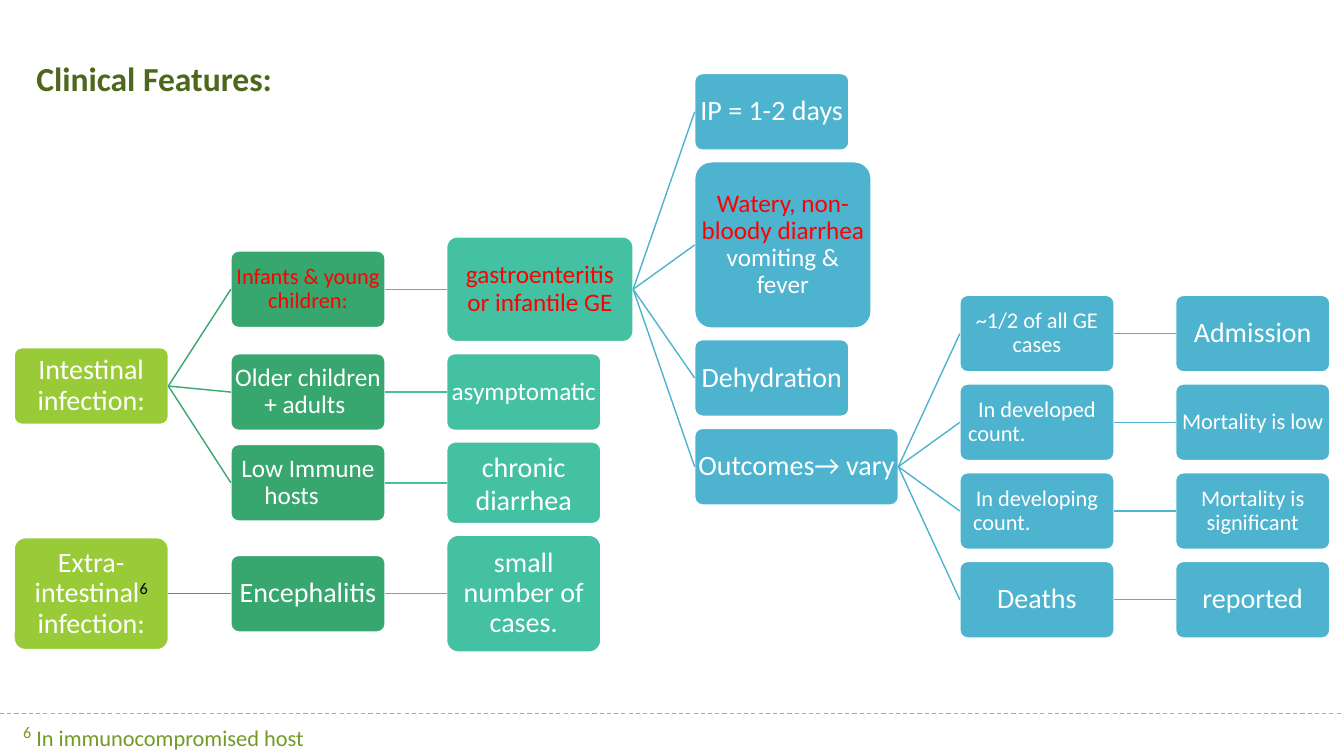
from lxml import etree
from pptx import Presentation
from pptx.dml.color import RGBColor
from pptx.enum.dml import MSO_LINE
from pptx.enum.shapes import MSO_CONNECTOR, MSO_SHAPE
from pptx.enum.text import MSO_ANCHOR, PP_ALIGN
from pptx.oxml.ns import qn
from pptx.util import Inches, Pt

DASH = MSO_LINE.DASH
LINE = MSO_CONNECTOR.STRAIGHT
ROUND = MSO_SHAPE.ROUNDED_RECTANGLE
MIDDLE = MSO_ANCHOR.MIDDLE
CENTER, LEFT = PP_ALIGN.CENTER, PP_ALIGN.LEFT

FONT = "Calibri"
WHITE, RED, BLACK = "FFFFFF", "FF0000", "000000"
LIME, GREEN, TEAL, BLUE = "99CB38", "37A76F", "44C1A3", "4EB3CF"
WIDE, HIGH = 1.53, 0.76

TITLE = "Clinical Features:"
NOTE = [("6", 20, 30), (" In immunocompromised host", 16, 0)]

# Left edge and colour of each level of the tree
LEVELS = [(0.14, LIME), (2.29, GREEN), (4.43, TEAL),
          (6.89, BLUE), (9.52, BLUE), (11.66, BLUE)]

# Node: paragraphs, text size, middle height, (width, height), children
# Paragraph: left indent (None = centred), runs of (text, colour, baseline)
SIZE = (WIDE, HIGH)


def para(text, colour=WHITE, indent=None):
    return indent, [(text, colour, 0)]


OUTCOMES = [
    ([para("~1/2 of all GE cases")], 16, 3.31, SIZE, [
        ([para("Admission")], 20, 3.31, SIZE, [])]),
    ([para("In developed"), para("count.", indent=0.05)], 16, 4.19, SIZE, [
        ([para("Mortality is low")], 16, 4.19, SIZE, [])]),
    ([para("In developing"), para("count.", indent=0.1)], 16, 5.07, SIZE, [
        ([para("Mortality is significant")], 16, 5.07, SIZE, [])]),
    ([para("Deaths")], 20, 5.95, SIZE, [
        ([para("reported")], 20, 5.95, SIZE, [])]),
]
SIGNS = [
    ([para("IP = 1-2 days")], 20, 1.11, SIZE, []),
    ([(None, [("Watery, non-bloody diarrhea ", RED, 0),
              ("vomiting & fever", WHITE, 0)])], 18, 2.43, (1.75, 1.65), []),
    ([para("Dehydration")], 20, 3.75, SIZE, []),
    ([para("Outcomes→ vary")], 20, 4.63, (2.02, HIGH), OUTCOMES),
]
TREE = [
    ([para("Intestinal infection:")], 20, 3.83, SIZE, [
        ([para("Infants & young children:", RED)], 16, 2.87, SIZE, [
            ([para("gastroenteritis", RED), para("or infantile GE", RED)],
             18, 2.87, (1.85, 1.04), SIGNS)]),
        ([para("Older children"), para("+ adults", indent=0.3)],
         18, 3.89, SIZE, [
            ([para("asymptomatic")], 18, 3.89, SIZE, [])]),
        ([para("Low Immune"), para("hosts", indent=0.3)], 18, 4.79, SIZE, [
            ([para("chronic"), para("diarrhea")],
             20, 4.79, (WIDE, 0.81), [])]),
    ]),
    ([(None, [("Extra-intestinal", WHITE, 0), ("6", BLACK, 30),
              (" infection:", WHITE, 0)])], 20, 5.89, (WIDE, 1.11), [
        ([para("Encephalitis")], 20, 5.89, SIZE, [
            ([para("small number of cases.")],
             20, 5.89, (WIDE, 1.16), [])])]),
]


def rgb(code):
    return RGBColor.from_string(code)


def put(item, values):
    for name, value in values.items():
        setattr(item, name, value)


def add_run(par, text, size, colour, base=0, bold=False):
    run = par.add_run()
    run.text = text
    put(run.font, {"name": FONT, "size": Pt(size), "bold": bold})
    run.font.color.rgb = rgb(colour)
    if base:
        run.font._element.set("baseline", str(base * 1000))


def add_line(slide, colour, width, ends=(0, 0, 0, 0)):
    line = slide.shapes.add_connector(LINE, *map(Inches, ends))
    line.line.color.rgb = rgb(colour)
    line.line.width = Pt(width)
    etree.SubElement(line._element.spPr, qn("a:effectLst"))
    return line


def add_node(slide, node, level=0, parent=None):
    """Draw a node, its link to the parent, and all its children."""
    paras, size, mid, (wide, high), kids = node
    left, colour = LEVELS[level]
    box = slide.shapes.add_shape(
        ROUND, *map(Inches, (left, mid - high / 2, wide, high)))
    box.adjustments[0] = 0.1
    box.shadow.inherit = False
    box.fill.solid()
    box.fill.fore_color.rgb = rgb(colour)
    box.line.color.rgb = rgb(WHITE)
    box.line.width = Pt(1)
    frame = box.text_frame
    pad = Inches(0.01)
    put(frame, {"word_wrap": True, "vertical_anchor": MIDDLE,
                "margin_left": pad, "margin_right": pad,
                "margin_top": pad, "margin_bottom": pad})
    for i, (indent, runs) in enumerate(paras):
        par = frame.add_paragraph() if i else frame.paragraphs[0]
        put(par, {"alignment": CENTER if indent is None else LEFT,
                  "line_spacing": 0.9 if high != 0.81 else 1.0})
        if indent:
            par._p.get_or_add_pPr().set("marL", str(Inches(indent)))
        for text, ink, base in runs:
            add_run(par, text, size, ink, base)
    if parent is not None:
        link = add_line(slide, colour, 1)
        link.begin_connect(parent, 3)
        link.end_connect(box, 1)
    for kid in kids:
        add_node(slide, kid, level + 1, box)


def main():
    deck = Presentation()
    put(deck, {"slide_width": Inches(13.33), "slide_height": Inches(7.5)})
    slide = deck.slides.add_slide(deck.slide_layouts[5])

    add_line(slide, LIME, 0.75, (0, 7.08, 13.33, 7.08)).line.dash_style = DASH

    title = slide.shapes.title
    put(title, {"left": Inches(0.26), "top": Inches(0.4),
                "width": Inches(11.5), "height": Inches(0.79)})
    put(title.text_frame, {"vertical_anchor": MIDDLE, "word_wrap": True})
    par = title.text_frame.paragraphs[0]
    put(par, {"alignment": LEFT, "line_spacing": 0.9})
    add_run(par, TITLE, 24, "4D671B", bold=True)

    for node in TREE:
        add_node(slide, node)

    note = slide.shapes.add_textbox(
        *map(Inches, (0.13, 7.08, 11.62, 0.37))).text_frame
    note.word_wrap = True
    for text, size, base in NOTE:
        add_run(note.paragraphs[0], text, size, "739A28", base)

    deck.save("out.pptx")


if __name__ == "__main__":
    main()
